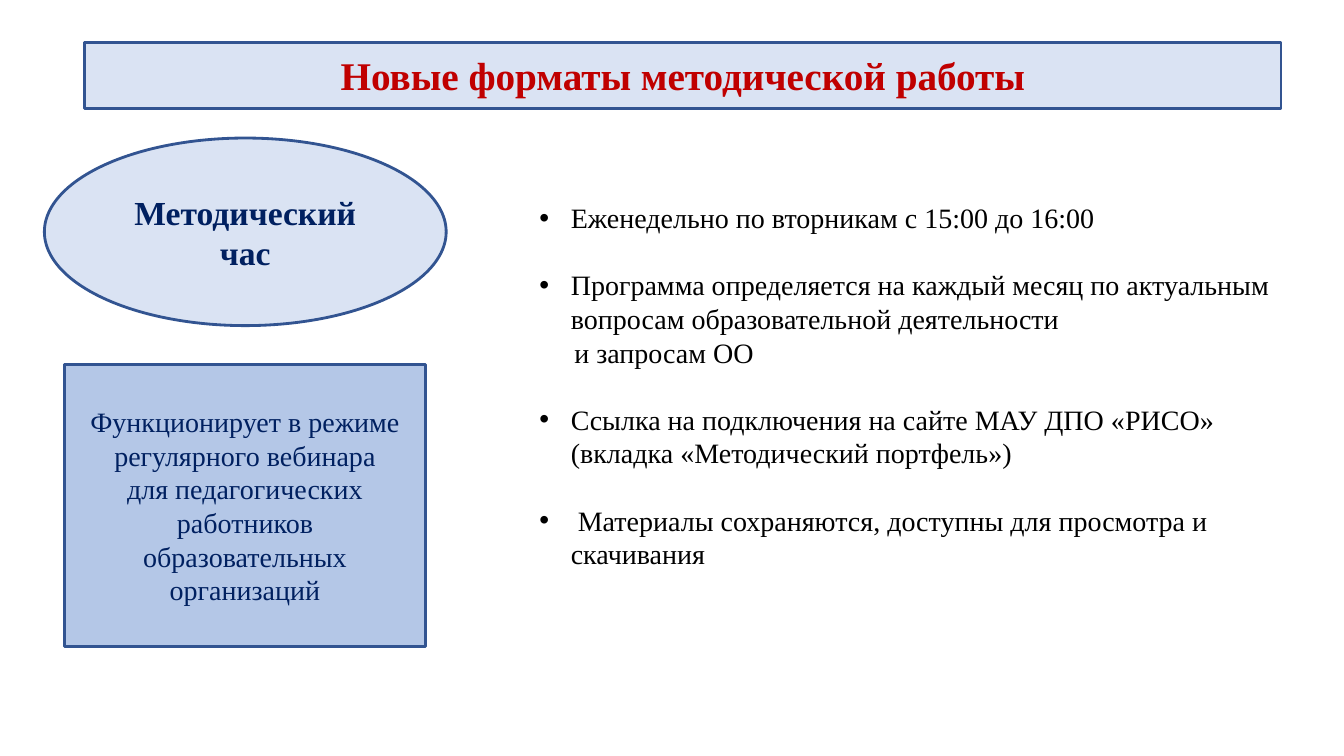
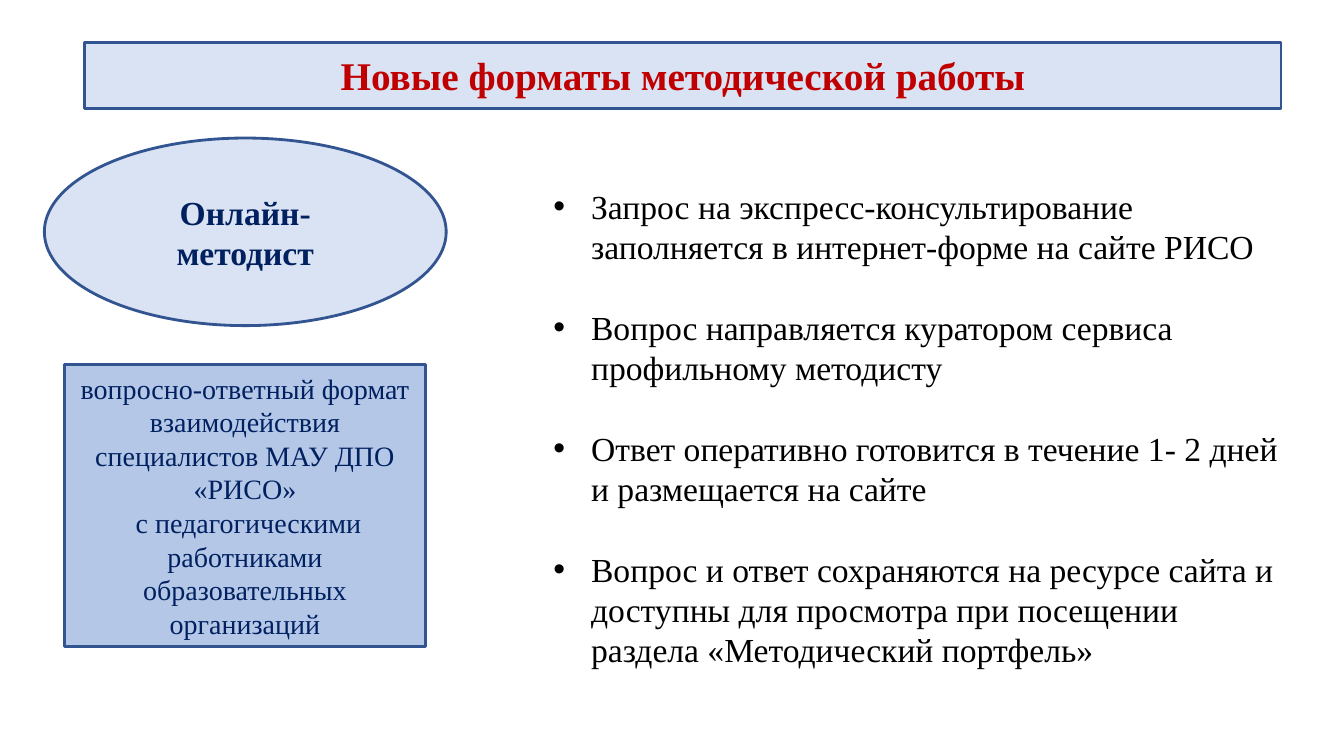
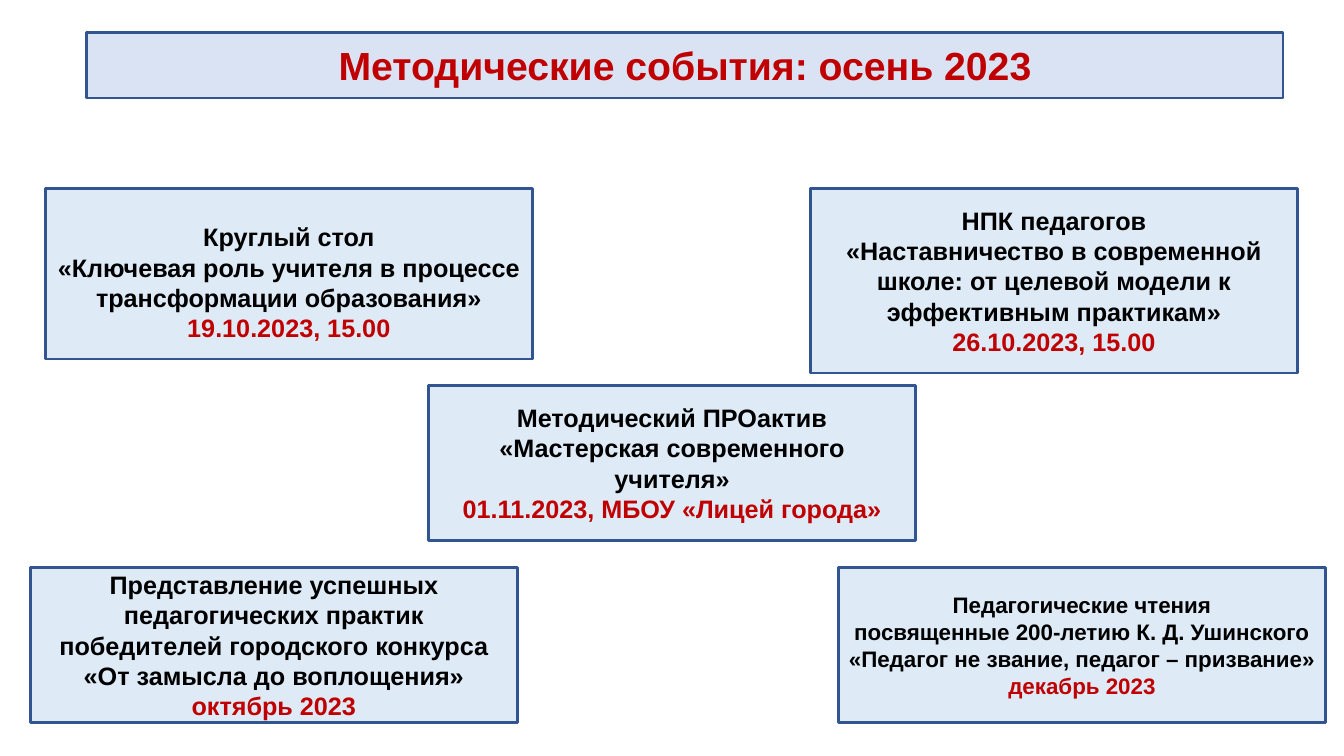
from lxml.etree import SubElement
from pptx import Presentation
from pptx.dml.color import RGBColor
from pptx.enum.shapes import MSO_SHAPE
from pptx.enum.text import MSO_ANCHOR, MSO_AUTO_SIZE, PP_ALIGN
from pptx.oxml.ns import qn
from pptx.util import Pt

BORDER = RGBColor(0x32, 0x54, 0x91)
BAND = RGBColor(0xDA, 0xE3, 0xF3)
PANEL = RGBColor(0xB4, 0xC7, 0xE7)
CARD = RGBColor(0xDE, 0xEB, 0xF7)
RED = RGBColor(0xC0, 0x00, 0x00)
NAVY = RGBColor(0x00, 0x20, 0x60)
BLACK = RGBColor(0x00, 0x00, 0x00)

SERIF = "Times New Roman"
SANS = "Arial"
LINE_FACTOR = 1.2
CARD_WIDTH = 348
TITLE_LAYOUT, LIST_LAYOUT = 5, 1


def place(box, left, top, width, height):
    box.left, box.top = Pt(left), Pt(top)
    box.width, box.height = Pt(width), Pt(height)


def paint(box, color):
    box.fill.solid()
    box.fill.fore_color.rgb = color
    box.line.color.rgb = BORDER
    box.line.width = Pt(2)


def prepare_frame(box, anchor):
    frame = box.text_frame
    frame.word_wrap = True
    frame.auto_size = MSO_AUTO_SIZE.NONE
    frame.vertical_anchor = anchor
    return frame


def add_para(frame, text, font, size, color, bold=False, align=PP_ALIGN.CENTER):
    first = frame.paragraphs[0]
    para = frame.add_paragraph() if first.runs else first
    para.alignment = align
    para.line_spacing = Pt(size * LINE_FACTOR)
    para.space_before = para.space_after = Pt(0)
    span = para.add_run()
    span.text = text
    span.font.name = font
    span.font.size = Pt(size)
    span.font.bold = bold
    span.font.color.rgb = color
    return para


def add_title(page, text, font, left, top):
    title = page.shapes.title
    place(title, left, top, 854.5, 47)
    paint(title, BAND)
    add_para(prepare_frame(title, MSO_ANCHOR.MIDDLE), text, font, 28, RED, True)


def add_panel(page, preset, bounds, color):
    box = page.shapes.add_shape(preset, *(Pt(length) for length in bounds))
    box.shadow.inherit = False
    paint(box, color)
    return prepare_frame(box, MSO_ANCHOR.MIDDLE)


def add_list(page, bounds, items, size, indent):
    body = page.placeholders[1]
    place(body, *bounds)
    frame = prepare_frame(body, MSO_ANCHOR.TOP)
    for number, (text, *continuations) in enumerate(items):
        para = add_para(frame, text, SERIF, size, BLACK, align=PP_ALIGN.LEFT)
        if number:
            para.space_before = Pt(size * LINE_FACTOR)
        set_indent(para, indent, -indent)
        for line in continuations:
            para = add_para(frame, line, SERIF, size, BLACK, align=PP_ALIGN.LEFT)
            properties = set_indent(para, indent + 2.5, 0)
            SubElement(properties, qn("a:buNone"))


def set_indent(para, margin, first_line):
    properties = para._p.get_or_add_pPr()
    properties.set("marL", str(Pt(margin)))
    properties.set("indent", str(Pt(first_line)))
    return properties


def add_format_page(deck, name, summary, list_bounds, items, size, indent):
    page = deck.slides.add_slide(deck.slide_layouts[LIST_LAYOUT])
    add_title(page, "Новые форматы методической работы", SERIF, 60.5, 30.3)
    oval = add_panel(page, MSO_SHAPE.OVAL, (31.7, 98.6, 287, 134), BAND)
    add_para(oval, name, SERIF, 24, NAVY, True)
    panel = add_panel(page, MSO_SHAPE.RECTANGLE, (46, 260.6, 258, 201), PANEL)
    for text in summary:
        add_para(panel, text, SERIF, 20, NAVY)
    add_list(page, list_bounds, items, size, indent)


def add_event(page, left, top, height, lines, date, size=18, top_inset=3.6):
    frame = add_panel(page, MSO_SHAPE.RECTANGLE, (left, top, CARD_WIDTH, height), CARD)
    frame.margin_top = Pt(top_inset)
    for line in lines:
        add_para(frame, line, SANS, size, BLACK, True)
    add_para(frame, date, SANS, size, RED, True)


def add_events_page(deck):
    page = deck.slides.add_slide(deck.slide_layouts[TITLE_LAYOUT])
    add_title(page, "Методические события: осень 2023", SANS, 62, 23)
    add_event(page, 32.3, 134.5, 122,
              ["Круглый стол",
               "«Ключевая роль учителя в процессе трансформации образования»"],
              "19.10.2023, 15.00", top_inset=15.6)
    add_event(page, 578.8, 134.5, 132,
              ["НПК педагогов",
               "«Наставничество в современной школе: от целевой модели к эффективным практикам»"],
              "26.10.2023, 15.00")
    add_event(page, 306, 275.2, 111,
              ["Методический ПРОактив «Мастерская современного учителя»"],
              "01.11.2023, МБОУ «Лицей города»")
    add_event(page, 21.6, 405.2, 111,
              ["Представление успешных педагогических практик победителей "
               "городского конкурса «От замысла до воплощения»"],
              "октябрь 2023")
    add_event(page, 598.8, 405.2, 111,
              ["Педагогические чтения",
               "посвященные 200-летию К. Д. Ушинского",
               "«Педагог не звание, педагог – призвание»"],
              "декабрь 2023", size=16)


def main():
    deck = Presentation()
    deck.slide_width, deck.slide_height = Pt(960), Pt(540)
    add_format_page(
        deck, "Методический час",
        ["Функционирует в режиме регулярного вебинара",
         "для педагогических работников образовательных организаций"],
        (378, 139.7, 564.5, 322.5),
        [("Еженедельно по вторникам с 15:00 до 16:00",),
         ("Программа определяется на каждый месяц по актуальным вопросам "
          "образовательной деятельности", "и запросам ОО"),
         ("Ссылка на подключения на сайте МАУ ДПО «РИСО» "
          "(вкладка «Методический портфель»)",),
         (" Материалы сохраняются, доступны для просмотра и скачивания",)],
        20, 22.5)
    add_format_page(
        deck, "Онлайн-методист",
        ["вопросно-ответный формат взаимодействия специалистов МАУ ДПО «РИСО»",
         " с педагогическими работниками образовательных организаций"],
        (388, 129, 533, 404.5),
        [("Запрос на экспресс-консультирование заполняется в "
          "интернет-форме на сайте РИСО",),
         ("Вопрос направляется куратором сервиса профильному методисту",),
         ("Ответ оперативно готовится в течение 1- 2 дней и размещается на сайте",),
         ("Вопрос и ответ сохраняются на ресурсе сайта и доступны для просмотра "
          "при посещении раздела «Методический портфель»",)],
        24, 27)
    add_events_page(deck)
    deck.save("out.pptx")


if __name__ == "__main__":
    main()
